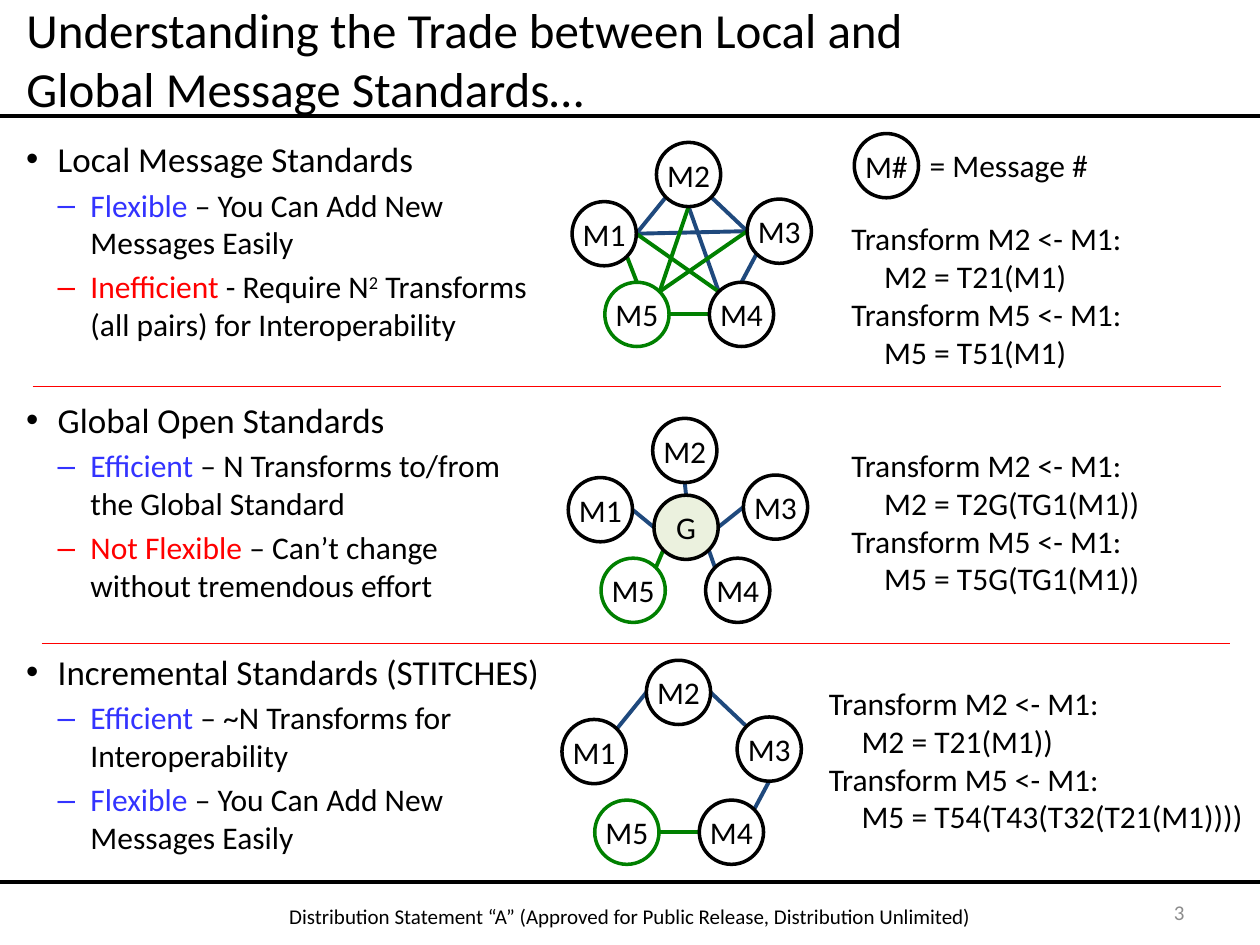
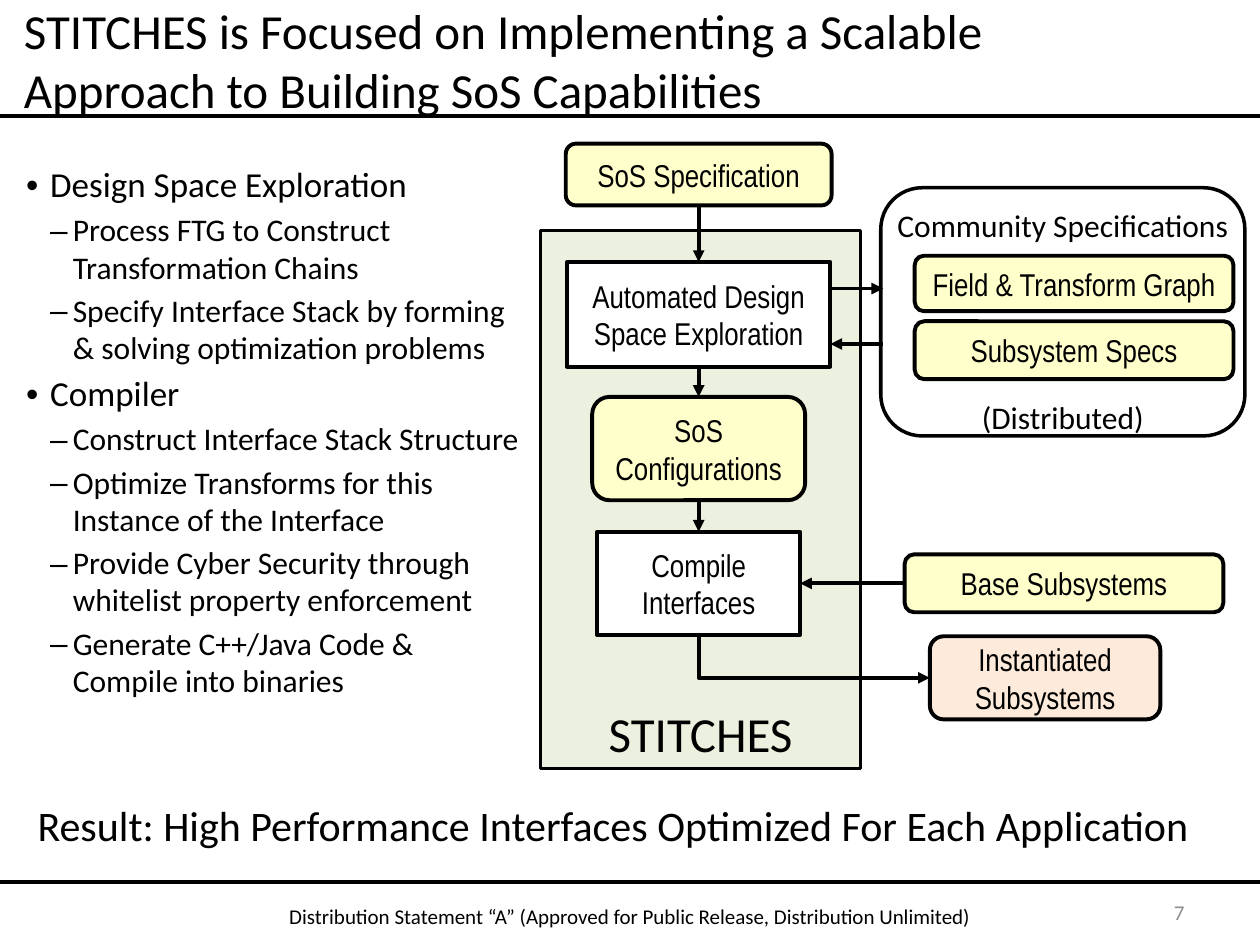
from math import cos, radians, sin

from lxml import etree
from pptx import Presentation
from pptx import util as u
from pptx.dml.color import RGBColor
from pptx.enum import shapes, text
from pptx.oxml.ns import qn

COLS, ROWS = 10, 7.5
CELL = u.Inches(1)  # the slide is a grid of 10 columns and 7.5 rows
C = {"ink": "000000", "paper": "FFFFFF", "blue": "3333FF", "red": "FF0000",
     "navy": "1F497D", "green": "008000", "sage": "EBF1DE", "cream": "FFFFCC",
     "peach": "FDEADA", "grey": "8C8C8C"}
LEFT, CENTER, RIGHT = text.PP_ALIGN.LEFT, text.PP_ALIGN.CENTER, text.PP_ALIGN.RIGHT
TOP, MIDDLE, BOTTOM = (text.MSO_ANCHOR.TOP, text.MSO_ANCHOR.MIDDLE,
                       text.MSO_ANCHOR.BOTTOM)
KIND = shapes.MSO_SHAPE
FOOTER = ("Distribution Statement “A” (Approved for Public Release, "
          "Distribution Unlimited)")
# Index of each connection site on a box
SITE_TOP, SITE_LEFT, SITE_BOTTOM, SITE_RIGHT = range(4)

NODE = 0.51
NODE_OFFSETS = {"M1": (0, 0.47), "M2": (0.67, 0), "M3": (1.39, 0.45),
                "M4": (1.09, 1.11), "M5": (0.26, 1.11), "G": (0.68, 0.61)}
ANGLES = {"r": 0, "br": 45, "b": 90, "bl": 135, "l": 180, "tl": 225, "t": 270, "tr": 315}

STANDARDS = [
    {"row": 1.04, "graph": (4.54, 1.13), "code_at": (6.66, 1.69),
     "bullets": [
         (0, ["Local Message Standards"]),
         (1, [("Flexible", "blue"), " – You Can Add New Messages Easily"]),
         (1, [("Inefficient", "red"), " - Require N", ("2", "ink", 30),
              " Transforms (all pairs) for Interoperability"])],
     "edges": {"navy": ["M1 r M3 l", "M2 b M4 tl", "M4 t M3 bl", "M3 l M2 br", "M1 r M2 bl"],
               "green": ["M2 b M5 tr", "M1 r M4 tl", "M5 tr M3 l", "M5 r M4 l", "M1 br M5 t"]},
     "code": ("T21(M1)", "T51(M1)")},
    {"row": 3.11, "graph": (4.51, 3.32), "code_at": (6.66, 3.49),
     "bullets": [
         (0, ["Global Open Standards"]),
         (1, [("Efficient", "blue"), " – N Transforms to/from the Global Standard"]),
         (1, [("Not Flexible ", "red"), "– Can’t change without tremendous effort"])],
     "edges": {"navy": ["G br M4 tl", "M1 r G l", "M3 l G r", "G t M2 b"],
               "green": ["G bl M5 tr"]},
     "code": ("T2G(TG1(M1))", "T5G(TG1(M1))")},
    {"row": 5.11, "graph": (4.46, 5.24), "code_at": (6.48, 5.38),
     "bullets": [
         (0, ["Incremental Standards (STITCHES)"]),
         (1, [("Efficient ", "blue"), "– ~N Transforms for Interoperability"]),
         (1, [("Flexible ", "blue"), "– You Can Add New Messages Easily"])],
     "edges": {"navy": ["M1 tr M2 l", "M3 b M4 tr", "M3 tl M2 r"],
               "green": ["M4 l M5 r"]},
     "code": ("T21(M1))", "T54(T43(T32(T21(M1))))")},
]

TOOL_BULLETS = [
    (0, ["Design Space Exploration"]),
    (1, ["Process FTG to Construct Transformation Chains"]),
    (1, ["Specify Interface Stack by forming & solving optimization problems"]),
    (0, ["Compiler"]),
    (1, ["Construct Interface Stack Structure"]),
    (1, ["Optimize Transforms for this Instance of the Interface"]),
    (1, ["Provide Cyber Security through whitelist property enforcement"]),
    (1, ["Generate C++/Java Code & Compile into binaries"]),
]


def cells(*values):
    return [int(v * CELL) for v in values]


def rgb(name):
    return RGBColor.from_string(C[name])


def set_frame(tf, anchor=TOP, inset=(0.1, 0.05)):
    tf.word_wrap = True
    tf.auto_size = text.MSO_AUTO_SIZE.NONE
    tf.vertical_anchor = anchor
    tf.margin_left = tf.margin_right = cells(inset[0])[0]
    tf.margin_top = tf.margin_bottom = cells(inset[1])[0]


def write(tf, runs, size=18, font="Calibri", color="ink", align=LEFT, before=0,
          spacing=None, margin=0, indent=0, bullet=None):
    """Add a paragraph; a run is a string or (string, colour[, superscript %])."""
    p = tf.paragraphs[0]
    if p.runs:
        p = tf.add_paragraph()
    else:
        before = 0
    pPr = p._p.get_or_add_pPr()
    pPr.set("marL", str(cells(margin)[0]))
    pPr.set("indent", str(cells(indent)[0]))
    if bullet:
        etree.SubElement(pPr, qn("a:buFont")).set("typeface", "Arial")
        etree.SubElement(pPr, qn("a:buChar")).set("char", bullet)
    p.alignment = align
    p.space_before = u.Pt(before)
    if spacing:
        p.line_spacing = spacing
    for run in [runs] if isinstance(runs, str) else runs:
        words, tint, raised = (((run,) if isinstance(run, str) else run) + (None, None))[:3]
        r = p.add_run()
        r.text = words
        r.font.size, r.font.name = u.Pt(size), font
        r.font.color.rgb = rgb(tint or color)
        if raised:
            r._r.get_or_add_rPr().set("baseline", str(raised * 1000))


def add_text(s, box, lines, anchor=TOP, **fmt):
    tf = s.shapes.add_textbox(*cells(*box)).text_frame
    set_frame(tf, anchor)
    for line in lines:
        write(tf, line, **fmt)
    return tf


def add_bullets(s, box, items, step, hang, spacing=None):
    """Two-level list: step is the first level's indent, hang the second's."""
    tf = s.shapes.add_textbox(*cells(*box)).text_frame
    set_frame(tf)
    for level, runs in items:
        size = (20, 18)[level]
        write(tf, runs, size=size, before=size * 0.2, spacing=spacing,
              margin=step + level * hang, indent=-(step, hang)[level], bullet="•–"[level])


def add_shape(s, kind, box, label="", fill="paper", line="ink", width=2.25,
              anchor=MIDDLE, inset=(0.1, 0.05), font="Arial Narrow", size=18):
    sp = s.shapes.add_shape(kind, *cells(*box))
    sp.shadow.inherit = False
    sp.fill.solid()
    sp.fill.fore_color.rgb = rgb(fill)
    sp.line.color.rgb = rgb(line)
    sp.line.width = u.Pt(width)
    set_frame(sp.text_frame, anchor, inset)
    if label:
        write(sp.text_frame, label, size=size, font=font, align=CENTER)
    return sp


def add_line(s, start=(0, 0), end=(0, 0), color="ink", width=2.25, arrow=None, bent=False):
    """arrow is "headEnd" (at start) or "tailEnd" (at end)."""
    kind = shapes.MSO_CONNECTOR.ELBOW if bent else shapes.MSO_CONNECTOR.STRAIGHT
    c = s.shapes.add_connector(kind, *cells(*start, *end))
    c.line.color.rgb = rgb(color)
    c.line.width = u.Pt(width)
    if arrow:
        etree.SubElement(c.line._get_or_add_ln(), qn(f"a:{arrow}")).set("type", "triangle")
    spPr = c._element.spPr
    etree.SubElement(spPr, qn("a:effectLst"))
    if bent:
        spPr.find(qn("a:prstGeom")).set("prst", "bentConnector2")
    return c


def join(s, a, a_site, b, b_site, **fmt):
    c = add_line(s, **fmt)
    c.begin_connect(a, a_site)
    c.end_connect(b, b_site)


def add_slide(prs, title, box, number):
    s = prs.slides.add_slide(prs.slide_layouts[5])
    sp = s.shapes.title
    sp.left, sp.top, sp.width, sp.height = cells(*box)
    set_frame(sp.text_frame, MIDDLE)
    write(sp.text_frame, title, size=28)
    for row in (0.92, 7):
        add_line(s, (0, row), (COLS, row))
    add_text(s, (0, 7.12, COLS, 0.34), [FOOTER], size=12, align=CENTER)
    add_text(s, (7.17, 7.04, 2.33, 0.4), [str(number)], MIDDLE,
             size=12, color="grey", align=RIGHT)
    return s


def add_node(s, x, y, label):
    add_shape(s, KIND.OVAL, (x, y, NODE, NODE), label, width=2, inset=(0, 0),
              font="Calibri", fill="sage" if label == "G" else "paper",
              line="green" if label == "M5" else "ink")


def add_graph(s, origin, edges):
    """Draw the message nodes and the edges, each written "node site node site"."""
    def node_at(name):
        return [o + d for o, d in zip(origin, NODE_OFFSETS[name])]

    def site(name, side):
        x, y = node_at(name)
        a, radius = radians(ANGLES[side]), NODE / 2
        return x + radius * (1 + cos(a)), y + radius * (1 + sin(a))

    for color, group in edges.items():
        for edge in group:
            a, a_side, b, b_side = edge.split()
            add_line(s, site(a, a_side), site(b, b_side), color)
    has_hub = any("G" in edge for edge in edges["navy"])
    for name in NODE_OFFSETS:
        if name != "G" or has_hub:
            add_node(s, *node_at(name), name)


def add_code(s, at, results):
    tf = add_text(s, (*at, 3.4, 1.31), [])
    tf.margin_right = 0
    for target, result in zip(("M2", "M5"), results):
        write(tf, f"Transform {target} <- M1:")
        write(tf, f"{target} = {result}", margin=0.26)


def build_trade_slide(prs):
    s = add_slide(prs, "Understanding the Trade between Local and Global Message Standards…",
                  (0.11, 0.09, 8.23, 0.75), 3)
    for x, row in ((0.26, 3.07), (0.33, 5.11)):
        add_line(s, (x, row), (x + 9.43, row), "red", 0.75)
    for standard in STANDARDS:
        add_bullets(s, (0.11, standard["row"], 4.29, 1.8), standard["bullets"], 0.25, 0.26)
        add_graph(s, standard["graph"], standard["edges"])
        add_code(s, standard["code_at"], standard["code"])
    add_node(s, 6.78, 1.06, "M#")
    add_text(s, (7.28, 1.11, 1.6, 0.4), ["= Message #"])


def build_tool_slide(prs):
    s = add_slide(prs, "STITCHES is Focused on Implementing a Scalable "
                  "Approach to Building SoS Capabilities", (0.09, 0.11, 8.24, 0.72), 7)
    add_bullets(s, (0.11, 1.26, 4.13, 5.04), TOOL_BULLETS, 0.19, 0.18, spacing=0.98)
    add_text(s, (0.2, 6.3, 9.8, 0.5),
             ["Result: High Performance Interfaces Optimized For Each Application"], size=24)

    rounded, square = KIND.ROUNDED_RECTANGLE, KIND.RECTANGLE
    community = add_shape(s, rounded, (6.99, 1.49, 2.89, 1.97), "Community Specifications",
                          width=2, anchor=TOP, inset=(0, 0.05), font="Calibri")
    write(community.text_frame, "(Distributed)", align=CENTER, before=88)
    add_shape(s, square, (4.29, 1.83, 2.54, 4.27), "STITCHES", "sage", width=2,
              anchor=BOTTOM, font="Calibri", size=28)

    axis = 5.545
    flow = []
    for kind, top, width, height, label, fill in (
            (rounded, 1.14, 2.11, 0.49, "SoS Specification", "cream"),
            (square, 2.08, 2.09, 0.83, "Automated Design Space Exploration", "paper"),
            (rounded, 3.15, 1.69, 0.82, "SoS Configurations", "cream"),
            (square, 4.22, 1.61, 0.82, "Compile Interfaces", "paper")):
        flow.append(add_shape(s, kind, (axis - width / 2, top, width, height), label, fill))
    for upper, lower in zip(flow, flow[1:]):
        join(s, upper, SITE_BOTTOM, lower, SITE_TOP, arrow="tailEnd")

    for x, y, height, label in ((7.26, 2.03, 0.44, "Field & Transform Graph"),
                                (7.26, 2.55, 0.46, "Subsystem Specs"),
                                (7.18, 4.4, 0.46, "Base Subsystems")):
        side = add_shape(s, rounded, (x, y, 2.53, height), label, "cream")
    compiler = flow[-1]
    join(s, side, SITE_LEFT, compiler, SITE_RIGHT, arrow="tailEnd")
    product = add_shape(s, rounded, (7.38, 5.05, 1.83, 0.66), "Instantiated Subsystems",
                        "peach", inset=(0, 0.05))
    join(s, product, SITE_LEFT, compiler, SITE_BOTTOM, arrow="headEnd", bent=True)
    add_line(s, (6.59, 2.29), (7.01, 2.29), arrow="tailEnd")
    add_line(s, (7.01, 2.73), (6.59, 2.73), arrow="tailEnd")


def main():
    prs = Presentation()
    prs.slide_width, prs.slide_height = cells(COLS, ROWS)
    build_trade_slide(prs)
    build_tool_slide(prs)
    prs.save("out.pptx")


if __name__ == "__main__":
    main()
